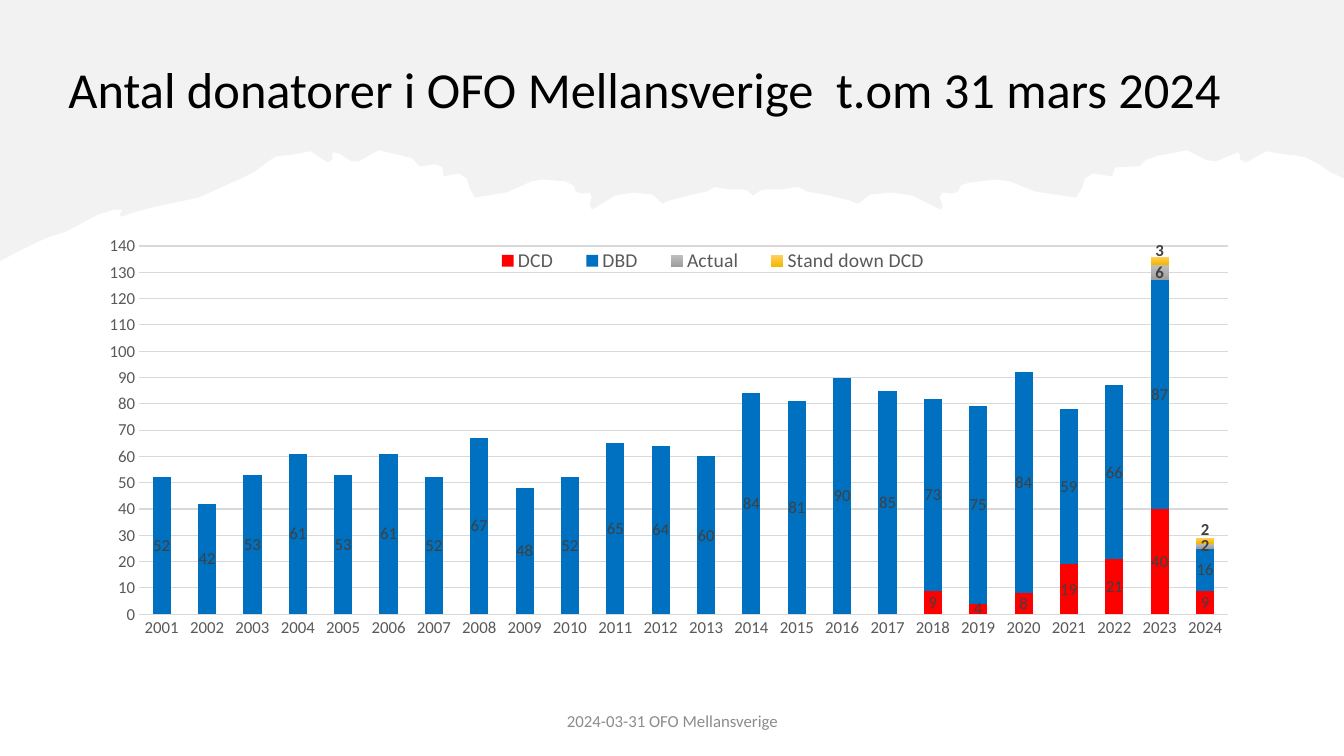
from lxml.etree import SubElement
from pptx import Presentation
from pptx.chart.data import CategoryChartData
from pptx.dml.color import RGBColor
from pptx.enum.chart import XL_CHART_TYPE, XL_LABEL_POSITION, XL_LEGEND_POSITION, XL_TICK_MARK
from pptx.enum.text import MSO_ANCHOR, PP_ALIGN
from pptx.oxml import parse_xml
from pptx.oxml.ns import nsdecls, qn
from pptx.util import Inches, Pt

FONT = "Calibri"
COLORS = {k: RGBColor.from_string(v) for k, v in {
    "title": "000000", "footer": "8C8C8C", "axis": "595959", "label": "404040",
    "grid": "D9D9D9", "sky": "E7E6E6", "dcd": "FF0000", "dbd": "0070C0",
    "gray_top": "C0C0C0", "gray_end": "9E9E9E",
    "gold_top": "FFD063", "gold_end": "F5B800"}.items()}

prs = Presentation()
prs.slide_width, prs.slide_height = Inches(13.33), Inches(7.5)
s = prs.slides.add_slide(prs.slide_layouts[6])


def share(left, top, width, height):
    """Percentages of the slide's size as lengths."""
    w, h = prs.slide_width, prs.slide_height
    return [int(p * side / 100) for p, side in
            ((left, w), (top, h), (width, w), (height, h))]


def add_text(text, box, size, color, align=PP_ALIGN.LEFT, spacing=1.0, after=0):
    tf = s.shapes.add_textbox(*share(*box)).text_frame
    tf.word_wrap = True
    tf.vertical_anchor = MSO_ANCHOR.MIDDLE
    p = tf.paragraphs[0]
    p.alignment, p.line_spacing, p.space_after = align, spacing, Pt(after)
    r = p.add_run()
    r.text = text
    r.font.name, r.font.size = FONT, Pt(size)
    r.font.color.rgb = COLORS[color]


# Torn-edge background, in hundredths of an inch
EDGE = [
    (0, 259), (19, 249), (46, 236), (65, 230), (82, 221), (97, 213), (113, 208),
    (121, 208), (119, 213), (120, 215), (135, 210), (150, 206), (197, 196),
    (239, 177), (253, 170), (261, 164), (269, 158), (275, 155), (293, 153),
    (308, 150), (325, 161), (330, 158), (329, 154), (331, 151), (336, 152),
    (342, 156), (349, 160), (356, 160), (370, 152), (376, 149), (388, 152),
    (397, 154), (409, 157), (416, 165), (432, 163), (439, 166), (440, 175),
    (455, 172), (463, 177), (466, 187), (471, 196), (502, 191), (527, 180),
    (538, 178), (561, 180), (569, 184), (571, 190), (577, 192), (585, 191),
    (587, 196), (585, 202), (587, 208), (597, 202), (610, 194), (629, 191),
    (647, 193), (654, 199), (657, 202), (664, 199), (686, 193), (701, 190),
    (708, 186), (713, 186), (723, 188), (736, 188), (741, 189), (747, 194),
    (754, 189), (760, 188), (775, 188), (787, 186), (793, 186), (801, 190),
    (818, 193), (843, 199), (851, 202), (855, 199), (863, 193), (884, 191),
    (905, 194), (921, 202), (933, 208), (935, 204), (932, 196), (934, 191),
    (944, 192), (950, 190), (953, 184), (962, 181), (989, 178), (1002, 180),
    (1027, 190), (1067, 196), (1073, 187), (1076, 177), (1084, 172), (1103, 175),
    (1106, 166), (1130, 165), (1136, 159), (1150, 154), (1162, 152), (1177, 149),
    (1183, 152), (1197, 159), (1206, 160), (1216, 156), (1228, 151), (1230, 154),
    (1230, 158), (1236, 161), (1256, 150), (1273, 153), (1284, 154), (1295, 156),
    (1310, 164), (1318, 170), (1333, 177), (1333, 0), (0, 0)]
builder = s.shapes.build_freeform(*EDGE[0], scale=Inches(0.01))
builder.add_line_segments(EDGE[1:], close=True)
sp = builder.convert_to_shape()
sp.shadow.inherit = False
sp.line.fill.background()
sp.fill.solid()
sp.fill.fore_color.rgb = COLORS["sky"]
rgb = sp.fill._xPr.find(".//" + qn("a:srgbClr"))
SubElement(rgb, qn("a:alpha"), val="50000")

# Title and footer
add_text("Antal donatorer i OFO Mellansverige  t.om 31 mars 2024",
         (4.35, 5.47, 92.57, 13.47), 36, "title", spacing=0.9)
add_text("2024-03-31 OFO Mellansverige", (33.16, 92.67, 33.76, 5.33), 12, "footer",
         align=PP_ALIGN.CENTER, after=6)

# Donors per year; each series fills the last years of the period
YEARS = range(2001, 2025)
CENTER, BASE = XL_LABEL_POSITION.CENTER, XL_LABEL_POSITION.INSIDE_BASE
SERIES = [  # name, values, fill colours, label position, bold labels
    ("DCD", [9, 4, 8, 19, 21, 40, 9], ["dcd"], CENTER, False),
    ("DBD", [52, 42, 53, 61, 53, 61, 52, 67, 48, 52, 65, 64, 60, 84, 81, 90, 85,
             73, 75, 84, 59, 66, 87, 16], ["dbd"], CENTER, False),
    ("Actual", [6, 2], ["gray_top", "gray_end"], CENTER, True),
    ("Stand down DCD", [3, 2], ["gold_top", "gold_end"], BASE, True)]
data = CategoryChartData()
data.categories = [str(year) for year in YEARS]
for name, values, *_ in SERIES:
    data.add_series(name, [None] * (len(YEARS) - len(values)) + values)
chart = s.shapes.add_chart(XL_CHART_TYPE.COLUMN_STACKED,
                           *share(6.9, 29.33, 86.27, 60.67), data).chart
chart.has_title = False
chart.font.name, chart.font.size = FONT, Pt(10)
plot = chart.plots[0]
plot.gap_width, plot.overlap, plot.vary_by_categories = 150, 100, False

for ser, (_, _, colors, position, bold) in zip(plot.series, SERIES):
    fill = ser.format.fill
    if len(colors) == 1:
        fill.solid()
        fill.fore_color.rgb = COLORS[colors[0]]
    else:
        fill.gradient()
        fill.gradient_angle = 270
        for stop, color in zip(fill.gradient_stops, colors):
            stop.color.rgb = COLORS[color]
    labels = ser.data_labels
    labels.show_value, labels.position = True, position
    labels.font.name, labels.font.size, labels.font.bold = FONT, Pt(12), bold
    labels.font.color.rgb = COLORS["label"]

# Axes and legend
cat, val = chart.category_axis, chart.value_axis
chart.has_legend = True
legend = chart.legend
legend.position, legend.include_in_layout = XL_LEGEND_POSITION.TOP, False
for part, size in ((cat.tick_labels, 12), (val.tick_labels, 12), (legend, 14)):
    part.font.name, part.font.size = FONT, Pt(size)
    part.font.color.rgb = COLORS["axis"]
for axis in (cat, val):
    axis.major_tick_mark = axis.minor_tick_mark = XL_TICK_MARK.NONE
val.minimum_scale, val.maximum_scale, val.major_unit = 0, 140, 10
val.format.line.fill.background()
for line, width in ((cat.format.line, 1), (val.major_gridlines.format.line, 0.75)):
    line.color.rgb, line.width = COLORS["grid"], Pt(width)

# Fixed places of plot and legend, as shares of the chart
plot_area = chart._chartSpace.chart.plotArea
for parent, before, target, box in (
        (plot_area, 0, '<c:layoutTarget val="inner"/>', (0.04, 0.053, 0.939, 0.803)),
        (legend._element, 1, "", (0.33, 0.05, 0.41, 0.07))):
    for old in parent.findall(qn("c:layout")):
        parent.remove(old)
    sides = "".join(f'<c:{k} val="{v}"/>' for k, v in zip("xywh", box))
    parent.insert(before, parse_xml(
        f'<c:layout {nsdecls("c")}><c:manualLayout>{target}'
        '<c:xMode val="edge"/><c:yMode val="edge"/>'
        f'{sides}</c:manualLayout></c:layout>'))

prs.save("out.pptx")
